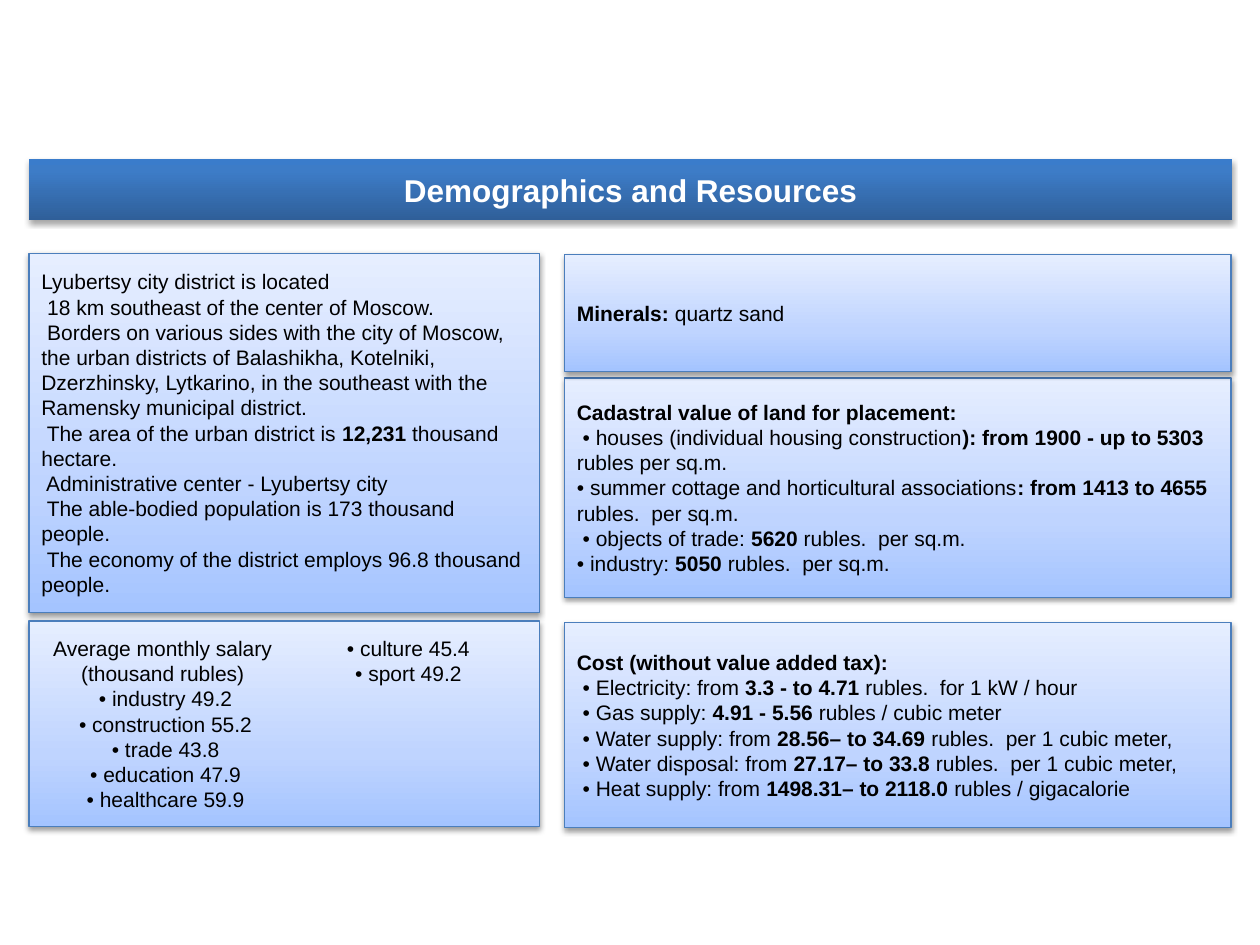
from dataclasses import dataclass

from lxml.etree import SubElement
from pptx import Presentation
from pptx.dml.color import RGBColor
from pptx.enum.shapes import MSO_SHAPE
from pptx.enum.text import MSO_ANCHOR, PP_ALIGN
from pptx.oxml.ns import qn
from pptx.util import Inches, Pt


@dataclass(frozen=True)
class Theme:
    font: str = "Arial"
    title_size: int = 18
    body_size: int = 12
    title_color: str = "FFFFFF"
    body_color: str = "000000"
    border: str = "4B7EBC"
    shadow: str = "000000"
    # Gradient stops run from the bottom edge to the top: (percent, colour)
    title_stops: tuple = ((0, "2F5F99"), (80, "3D7CC7"), (100, "3A7CCB"))
    panel_stops: tuple = ((0, "A4C4FF"), (35, "BFD4FF"), (100, "E6EEFF"))


theme = Theme()


def add_box(slide, bounds, stops, shadow_distance, shadow_opacity):
    """Add a rectangle with a vertical gradient and a soft shadow below."""
    shape = slide.shapes.add_shape(MSO_SHAPE.RECTANGLE, *map(Inches, bounds))
    shape.fill.gradient()
    shape.fill.gradient_angle = 90
    properties = shape._element.spPr
    stop_list = properties.find(".//" + qn("a:gsLst"))
    for stop in list(stop_list):
        stop_list.remove(stop)
    for percent, color in stops:
        stop = SubElement(stop_list, qn("a:gs"), pos=str(percent * 1000))
        SubElement(stop, qn("a:srgbClr"), val=color)

    shape.shadow.inherit = False
    shadow = SubElement(
        properties.find(qn("a:effectLst")), qn("a:outerShdw"),
        blurRad=str(Pt(3.1)), dist=str(Pt(shadow_distance)),
        dir="5400000", rotWithShape="0")
    color = SubElement(shadow, qn("a:srgbClr"), val=theme.shadow)
    SubElement(color, qn("a:alpha"), val=str(shadow_opacity * 1000))
    return shape


def write_text(shape, lines, size, color, alignment):
    """Write one paragraph per line; text between ** marks is bold."""
    text_frame = shape.text_frame
    text_frame.word_wrap = True
    text_frame.vertical_anchor = MSO_ANCHOR.MIDDLE
    for index, line in enumerate(lines):
        paragraph = text_frame.paragraphs[0] if index == 0 else text_frame.add_paragraph()
        paragraph.alignment = alignment
        for position, text in enumerate(line.split("**")):
            if not text:
                continue
            run = paragraph.add_run()
            run.text = text
            run.font.name = theme.font
            run.font.size = Pt(size)
            run.font.bold = position % 2 == 1
            run.font.color.rgb = RGBColor.from_string(color)


presentation = Presentation()
presentation.slide_width = Inches(10)
presentation.slide_height = Inches(7.5)
slide = presentation.slides.add_slide(presentation.slide_layouts[6])

# Two columns: left edge and width
left_column, left_width = 0.23, 4.05
right_column, right_width = 4.48, 5.29

location = [
    "Lyubertsy city district is located",
    " 18 km southeast of the center of Moscow.",
    " Borders on various sides with the city of Moscow, the urban districts of "
    "Balashikha, Kotelniki, Dzerzhinsky, Lytkarino, in the southeast with the "
    "Ramensky municipal district.",
    " The area of the urban district is **12,231** thousand hectare.",
    " Administrative center - Lyubertsy city",
    " The able-bodied population is 173 thousand people.",
    " The economy of the district employs 96.8 thousand people.",
]
salaries = [
    ("industry", 49.2), ("construction", 55.2), ("trade", 43.8), ("education", 47.9),
    ("healthcare", 59.9), ("culture", 45.4), ("sport", 49.2),
]
salary_lines = ["Average monthly salary (thousand rubles)"]
salary_lines += [f" • {sector} {salary}" for sector, salary in salaries]
land_values = [
    "**Cadastral value of land for placement:**",
    " • houses (individual housing construction**): from 1900 - up to 5303 **rubles per sq.m.",
    "• summer cottage and horticultural associations**: from 1413 to 4655 **rubles.  per sq.m.",
    " • objects of trade: **5620 **rubles.  per sq.m.",
    "• industry:** 5050 **rubles.  per sq.m.",
]
utility_costs = [
    "**Cost (without value added tax):**",
    " • Electricity: from **3.3 - to 4.71 **rubles.  for 1 kW / hour",
    " • Gas supply: **4.91 - 5.56 **rubles / cubic meter",
    " • Water supply: from **28.56– to 34.69 **rubles.  per 1 cubic meter,",
    " • Water disposal: from **27.17– to 33.8 **rubles.  per 1 cubic meter,",
    " • Heat supply: from **1498.31– to 2118.0 **rubles / gigacalorie",
]

# Panels: bounds, lines, alignment, number of text columns
panels = [
    ((left_column, 2.01, left_width, 2.85), location, PP_ALIGN.LEFT, 1),
    ((left_column, 4.93, left_width, 1.63), salary_lines, PP_ALIGN.CENTER, 2),
    ((right_column, 3, right_width, 1.74), land_values, PP_ALIGN.LEFT, 1),
    ((right_column, 2.02, right_width, 0.93), ["**Minerals: **quartz sand"], PP_ALIGN.LEFT, 1),
    ((right_column, 4.94, right_width, 1.63), utility_costs, PP_ALIGN.LEFT, 1),
]
for bounds, lines, alignment, columns in panels:
    panel = add_box(slide, bounds, theme.panel_stops, 1.6, 38)
    panel.line.color.rgb = RGBColor.from_string(theme.border)
    panel.line.width = Pt(0.75)
    write_text(panel, lines, theme.body_size, theme.body_color, alignment)
    if columns > 1:
        panel.text_frame._txBody.bodyPr.set("numCol", str(columns))

# Title bar
title_bar = add_box(slide, (left_column, 1.26, 9.55, 0.49), theme.title_stops, 1.8, 35)
title_bar.line.fill.background()
write_text(title_bar, ["**Demographics and Resources**"], theme.title_size,
           theme.title_color, PP_ALIGN.CENTER)

presentation.save("out.pptx")
